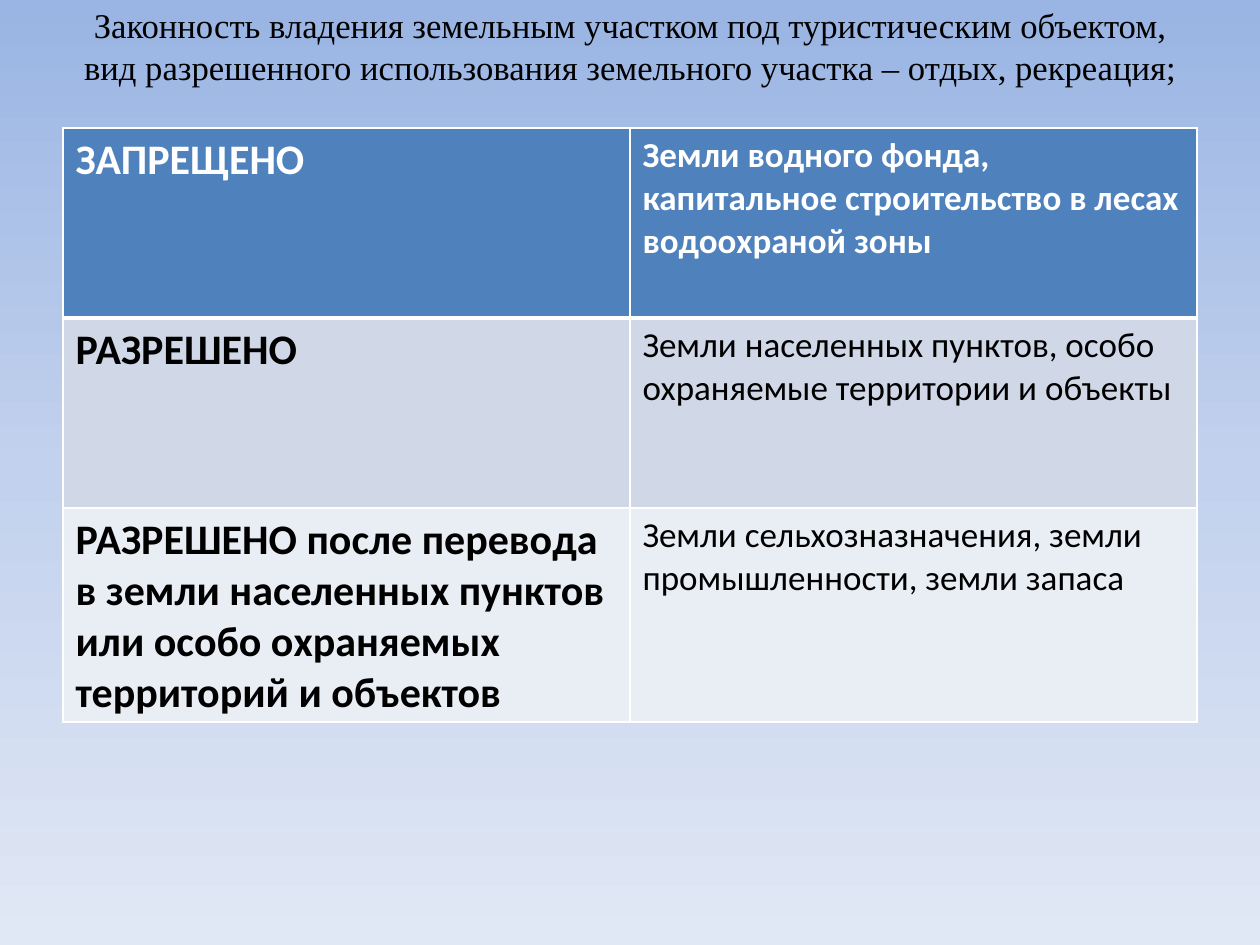
from copy import deepcopy

from pptx import Presentation
from pptx.dml.color import RGBColor
from pptx.enum.text import MSO_ANCHOR, PP_ALIGN
from pptx.oxml import parse_xml
from pptx.oxml.ns import nsdecls, qn
from pptx.util import Pt

PX = 914400 // 126  # EMU per px
COLORS = {
    "sky_top": "9AB5E4", "sky_middle": "C2D1ED", "sky_bottom": "E1E8F5",
    "header": "4F81BD", "band_dark": "D0D8E8", "band_light": "E9EDF4",
    "white": "FFFFFF", "black": "000000",
}
HEADING = ("Законность владения земельным участком под туристическим объектом, "
           "вид разрешенного использования земельного участка – отдых, рекреация;")
# status, lands, fill, text colour, lands in bold
LAND_RULES = [
    ("ЗАПРЕЩЕНО",
     "Земли водного фонда, капитальное строительство в лесах водоохраной зоны",
     "header", "white", True),
    ("РАЗРЕШЕНО",
     "Земли населенных пунктов, особо охраняемые территории и объекты",
     "band_dark", "black", False),
    ("РАЗРЕШЕНО после перевода в земли населенных пунктов или особо охраняемых "
     "территорий и объектов",
     "Земли сельхозназначения, земли промышленности, земли запаса",
     "band_light", "black", False),
]


def rgb(name):
    return RGBColor.from_string(COLORS[name])


def set_font(paragraph, family, size, color, bold=False):
    font = paragraph.font
    font.name, font.size, font.bold = family, Pt(size), bold
    font.color.rgb = rgb(color)


def paint_background(slide):
    fill = slide.background.fill
    fill.gradient()
    fill.gradient_angle = 270  # top to bottom
    stops = slide.element.find(".//" + qn("a:gsLst"))
    stops.insert(1, deepcopy(stops[0]))
    shades = ("sky_top", "sky_middle", "sky_bottom")
    for index, (stop, shade) in enumerate(zip(fill.gradient_stops, shades)):
        stop.position = index / 2
        stop.color.rgb = rgb(shade)


def add_heading(slide, left, top, width, height):
    heading = slide.shapes.add_textbox(left * PX, top * PX, width * PX, height * PX)
    frame = heading.text_frame
    frame.word_wrap = True
    frame.vertical_anchor = MSO_ANCHOR.TOP
    frame.margin_top = frame.margin_bottom = 0
    frame.text = HEADING
    paragraph = frame.paragraphs[0]
    paragraph.alignment = PP_ALIGN.CENTER
    set_font(paragraph, "Times New Roman", 19.8, "black")


def set_borders(cell, widths):
    properties = cell._tc.get_or_add_tcPr()
    for side, width in widths.items():
        properties.append(parse_xml(
            f'<a:ln{side} {nsdecls("a")} w="{Pt(width)}"><a:solidFill>'
            f'<a:srgbClr val="{COLORS["white"]}"/></a:solidFill></a:ln{side}>'))


def add_land_table(slide, left, top, width, height):
    table = slide.shapes.add_table(len(LAND_RULES), 2, left * PX, top * PX,
                                   width * PX, height * PX).table
    for row, (status, lands, fill, color, lands_bold) in enumerate(LAND_RULES):
        entries = ((status, 24, True), (lands, 20, lands_bold))
        for column, (text, size, bold) in enumerate(entries):
            cell = table.cell(row, column)
            # Thick rule under the header row
            set_borders(cell, {"L": 1, "R": 1, "T": 3 if row == 1 else 1,
                               "B": 3 if row == 0 else 1})
            cell.fill.solid()
            cell.fill.fore_color.rgb = rgb(fill)
            cell.text = text
            set_font(cell.text_frame.paragraphs[0], "Calibri", size, color, bold)


def main():
    presentation = Presentation()
    presentation.slide_width = 1260 * PX
    presentation.slide_height = 945 * PX
    slide = presentation.slides.add_slide(presentation.slide_layouts[6])
    paint_background(slide)
    add_heading(slide, 63, 4, 1134, 82)
    add_land_table(slide, 63, 128, 1134, 570)
    presentation.save("out.pptx")


if __name__ == "__main__":
    main()
